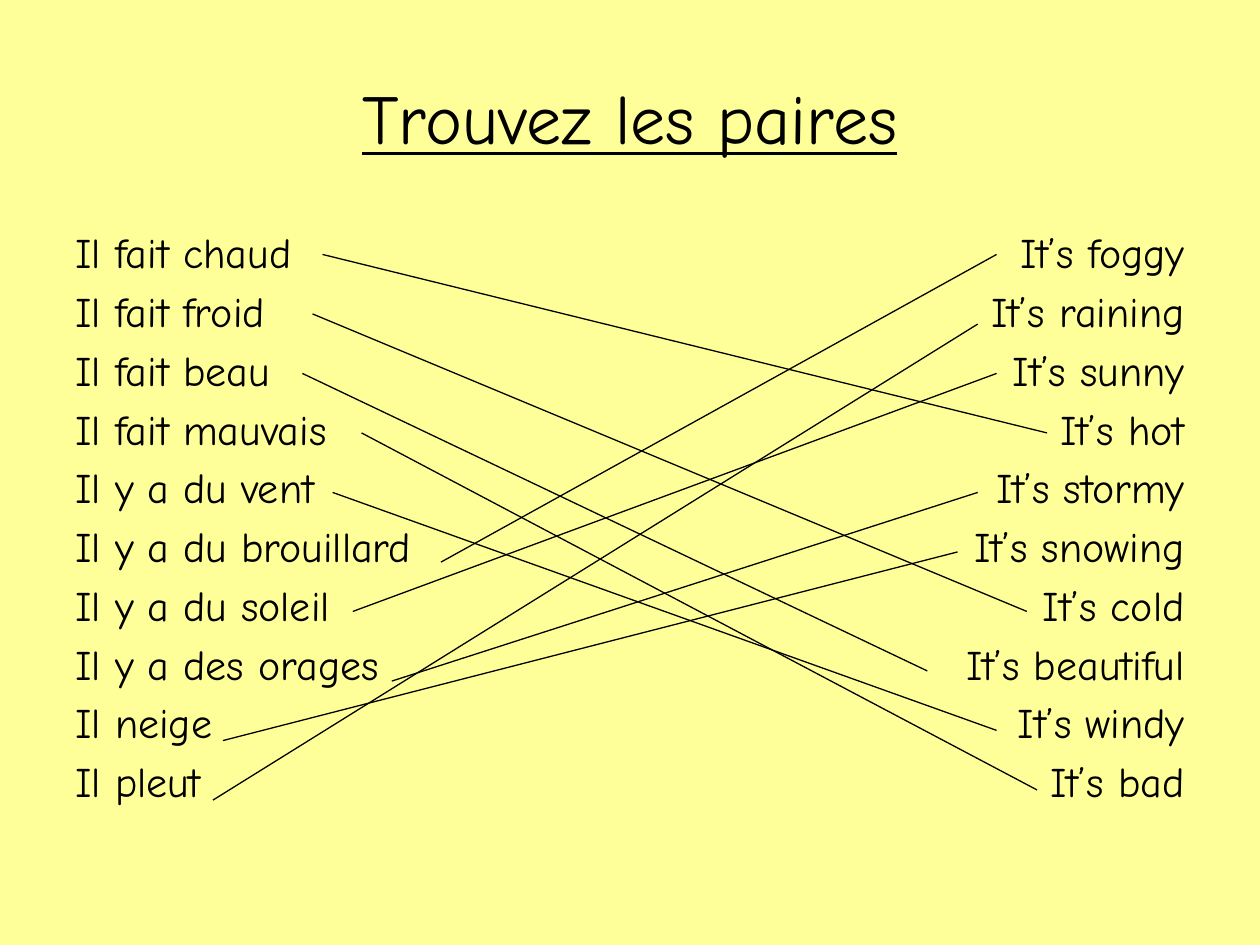
import pptx
import pptx.dml.color
import pptx.enum.shapes
import pptx.enum.text
import pptx.oxml.ns
import pptx.util
from lxml import etree

Pt = pptx.util.Pt
Align = pptx.enum.text.PP_ALIGN
Anchor = pptx.enum.text.MSO_ANCHOR

YELLOW = pptx.dml.color.RGBColor(0xFF, 0xFF, 0x99)
BLACK = pptx.dml.color.RGBColor(0x00, 0x00, 0x00)
FONT = "Comic Neue"

COLUMN_WIDTH = 318
FIRST_ROW = 19.4
ROW_PITCH = 34
NUDGE = 5.8  # small drop given to some line ends

# French phrase, line start from the left edge, drop, English partner
FRENCH = [
    ("Il fait chaud", 148.3, 0, "It’s hot"),
    ("Il fait froid", 142.6, 0, "It’s cold"),
    ("Il fait beau", 136.8, 0, "It’s beautiful"),
    ("Il fait mauvais", 170.6, 0, "It’s bad"),
    ("Il y a du vent", 154.1, 0, "It’s windy"),
    ("Il y a du brouillard", 216, NUDGE, "It’s foggy"),
    ("Il y a du soleil", 165.6, 0, "It’s sunny"),
    ("Il y a des orages", 187.9, NUDGE, "It’s stormy"),
    ("Il neige", 91.4, NUDGE, "It’s snowing"),
    ("Il pleut", 85.7, NUDGE, "It’s raining"),
]

# English phrase, line end from the right edge, drop
ENGLISH = [
    ("It’s foggy", 114.5, 0),
    ("It’s raining", 125.3, NUDGE),
    ("It’s sunny", 114.5, 0),
    ("It’s hot", 85.7, 0),
    ("It’s stormy", 125.3, 0),
    ("It’s snowing", 136.8, 0),
    ("It’s cold", 97.2, 0),
    ("It’s beautiful", 154.1, 0),
    ("It’s windy", 114.5, 0),
    ("It’s bad", 91.4, 0),
]


def set_list_spacing(paragraph, percent=20, indent=27):
    """Give a paragraph a hanging indent and relative space before."""
    properties = paragraph._p.get_or_add_pPr()
    properties.set("marL", str(Pt(indent)))
    properties.set("indent", str(-Pt(indent)))
    before = etree.SubElement(properties, pptx.oxml.ns.qn("a:spcBef"))
    amount = etree.SubElement(before, pptx.oxml.ns.qn("a:spcPct"))
    amount.set("val", str(percent * 1000))


def add_text(slide, lines, box, size, align=Align.LEFT, anchor=Anchor.TOP,
             underline=False, hanging=False):
    shape = slide.shapes.add_textbox(*(Pt(length) for length in box))
    frame = shape.text_frame
    frame.word_wrap = True
    frame.vertical_anchor = anchor
    frame.text = "\n".join(lines)
    for paragraph in frame.paragraphs:
        paragraph.alignment = align
        if hanging:
            set_list_spacing(paragraph)
        font = paragraph.runs[0].font
        font.name = FONT
        font.size = Pt(size)
        font.underline = underline
        font.color.rgb = BLACK


def add_line(slide, start, end):
    line = slide.shapes.add_connector(
        pptx.enum.shapes.MSO_CONNECTOR.STRAIGHT,
        *(Pt(length) for length in (*start, *end)))
    line.line.color.rgb = BLACK
    line.line.width = Pt(0.75)
    etree.SubElement(line._element.spPr, pptx.oxml.ns.qn("a:effectLst"))


def add_title(slide, box):
    add_text(slide, ["Trouvez les paires"], box, 40, align=Align.CENTER,
             anchor=Anchor.MIDDLE, underline=True)


def add_phrases(slide, box):
    left, top, width, height = box
    add_text(slide, [row[0] for row in FRENCH],
             (left, top, COLUMN_WIDTH, height), 24, hanging=True)
    add_text(slide, [row[0] for row in ENGLISH],
             (left + width - COLUMN_WIDTH, top, COLUMN_WIDTH, height), 24,
             align=Align.RIGHT, hanging=True)


def add_answers(slide, box):
    left, top, width, height = box

    def row_y(row, drop):
        return top + FIRST_ROW + row * ROW_PITCH + drop

    ends = {phrase: (left + width - inset, row_y(row, drop))
            for row, (phrase, inset, drop) in enumerate(ENGLISH)}
    for row, (_, inset, drop, partner) in enumerate(FRENCH):
        add_line(slide, (left + inset, row_y(row, drop)), ends[partner])


def main():
    presentation = pptx.Presentation()
    presentation.slide_width = Pt(720)
    presentation.slide_height = Pt(540)
    slide = presentation.slides.add_slide(presentation.slide_layouts[6])
    slide.background.fill.solid()
    slide.background.fill.fore_color.rgb = YELLOW

    # Heading
    add_title(slide, (36, 21.6, 648, 90))

    # Two columns of phrases, joined by the answer lines
    exercise = (36, 126, 648, 356.4)
    add_phrases(slide, exercise)
    add_answers(slide, exercise)

    presentation.save("out.pptx")


if __name__ == "__main__":
    main()
